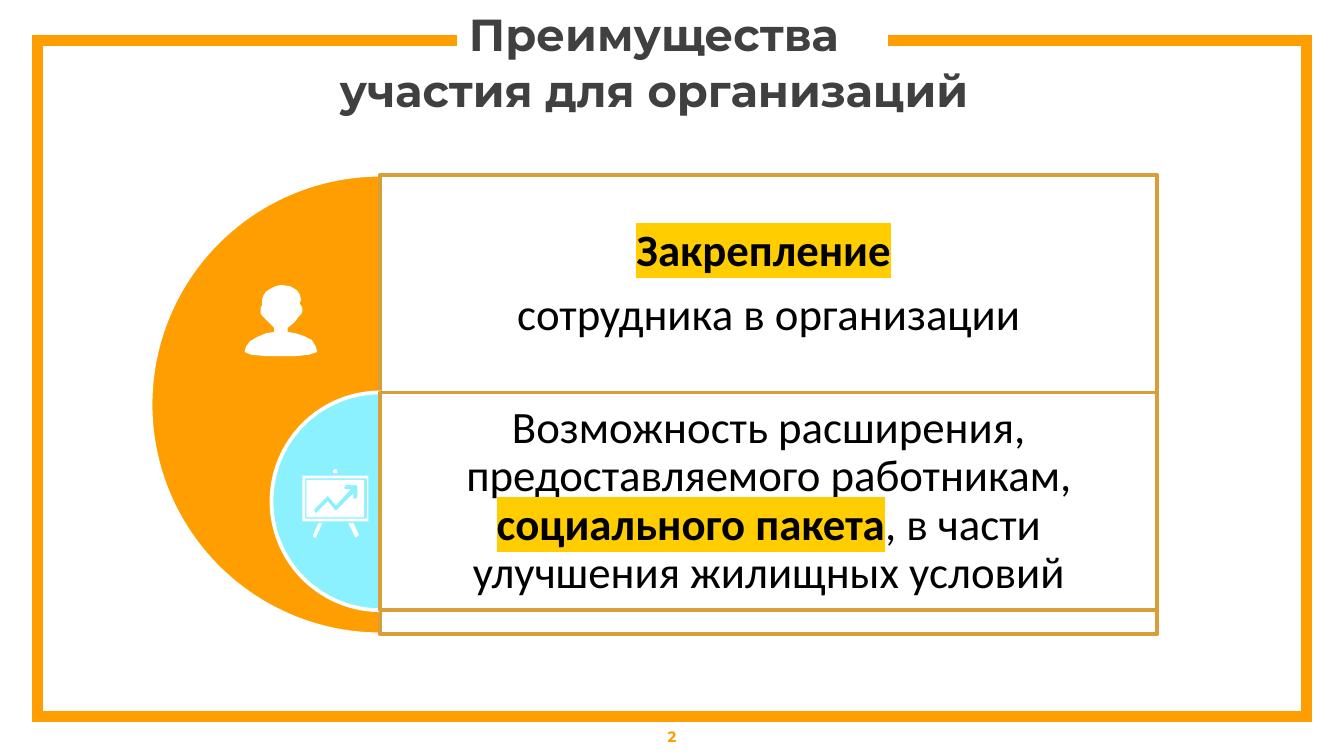
from pptx import Presentation, util as u
from pptx.dml.color import RGBColor
from pptx.enum import shapes, text
from pptx.oxml.ns import qn
from lxml import etree

W = 10
H = W * 9 / 16
ORANGE, YELLOW, CYAN, GOLD = "FF9E00", "FFCD00", "8BF1FF", "D89F39"
WHITE, BLACK, GREY = "FFFFFF", "000000", "404040"

# Content: a row is a list of paragraphs, a paragraph a list of (text, marked)
TITLE = ["Преимущества", "участия для организаций"]
PAGE = "2"
ROWS = [
    [[("Закрепление", True), (" ", False)],
     [("сотрудника в организации", False)]],
    [[("Возможность расширения, предоставляемого работникам, ", False),
      ("социального пакета", True), (", в части", False), ("\n", False),
      ("улучшения жилищных условий", False)]],
]

# Half discs share a vertical axis, where the panels start
AXIS, TOP, ROW_H, PANEL_W, BIG = 2.83, 1.3, 1.62, 5.78, 3.42
DISCS = [(BIG, ORANGE), (ROW_H, CYAN)]

# Outlines in hundredths of an inch
FRAME = [(340, 30), (28, 30), (28, 533), (972, 533), (972, 30), (661, 30)]
PERSON = [(209, 212), (205, 213), (201, 215), (198, 217), (196, 220), (195, 223),
          (195, 227), (194, 229), (194, 233), (195, 235), (197, 237), (199, 239),
          (204, 244), (204, 247), (198, 248), (191, 251), (186, 254), (183, 258),
          (182, 262), (187, 264), (198, 265), (209, 265), (220, 265), (230, 264),
          (236, 262), (235, 258), (232, 253), (226, 250), (220, 248), (214, 247),
          (214, 244), (219, 240), (222, 236), (224, 234), (225, 232), (225, 229),
          (223, 226), (224, 223), (223, 219), (221, 216), (216, 213)]
ARROW = [(265, 361), (266, 362), (266, 370), (265, 371), (263, 371), (263, 367),
         (251, 379), (250, 380), (249, 379), (244, 373), (236, 381), (235, 382),
         (234, 380), (234, 379), (243, 370), (244, 369), (250, 376), (261, 364),
         (257, 364), (256, 363), (257, 361)]


def box(l, t, r, b):
    return [(l, t), (r, t), (r, b), (l, b)]


BOARD = [
    [box(225, 354, 274, 388), box(227, 356, 273, 386)],
    [[(249, 349), (248, 350), (248, 352), (251, 352), (251, 350), (250, 349)]],
    [[(237, 389), (233, 398), (233, 399), (234, 400), (235, 400), (240, 389)]],
    [[(259, 389), (264, 399), (265, 400), (266, 399), (267, 398), (263, 389)]],
    [box(228, 357, 271, 385), ARROW],
]


def rgb(value):
    return RGBColor.from_string(value)


def style(sp, fill=None, line=None, width=2, alpha=None):
    sp.shadow.inherit = False
    if fill:
        sp.fill.solid()
        sp.fill.fore_color.rgb = rgb(fill)
        if alpha:
            color = sp.fill._xPr.find(qn("a:solidFill"))[0]
            etree.SubElement(color, qn("a:alpha"), val=str(alpha * 1000))
    else:
        sp.fill.background()
    if line:
        sp.line.color.rgb = rgb(line)
        sp.line.width = u.Pt(width)
    else:
        sp.line.fill.background()
    return sp


def outline(contours, close=True, **look):
    first, *rest = contours
    fb = s.shapes.build_freeform(*first[0], scale=9144)
    fb.add_line_segments(first[1:], close=close)
    for c in rest:
        fb.move_to(*c[0])
        fb.add_line_segments(c[1:], close=close)
    return style(fb.convert_to_shape(), **look)


def preset(kind, *at, **look):
    return style(s.shapes.add_shape(kind, *map(u.Inches, at)), **look)


def place(sp, at):
    sp.left, sp.top, sp.width, sp.height = map(u.Inches, at)
    return sp


def write(sp, paragraphs, font, size, color, bold=False, middle=False, spacing=None):
    tf = sp.text_frame
    tf.word_wrap = True
    tf.auto_size = text.MSO_AUTO_SIZE.NONE
    tf.vertical_anchor = text.MSO_ANCHOR.MIDDLE if middle else text.MSO_ANCHOR.TOP
    tf.margin_left = tf.margin_right = tf.margin_top = tf.margin_bottom = u.Inches(0.1)
    for i, runs in enumerate(paragraphs):
        p = tf.add_paragraph() if i else tf.paragraphs[0]
        p.alignment = text.PP_ALIGN.CENTER
        if spacing:
            p.line_spacing, p.space_after = spacing
        for words, marked in runs:
            if words == "\n":
                p.add_line_break()
                continue
            r = p.add_run()
            r.text = words
            f = r.font
            f.name, f.size, f.bold = font, u.Pt(size), bold or marked
            f.color.rgb = rgb(color)
            if marked:
                hl = etree.Element(qn("a:highlight"))
                etree.SubElement(hl, qn("a:srgbClr"), val=YELLOW)
                f._rPr.find(qn("a:solidFill")).addnext(hl)


def text_box(at, *args, **kw):
    write(s.shapes.add_textbox(*map(u.Inches, at)), *args, **kw)


prs = Presentation()
prs.slide_width, prs.slide_height = u.Inches(W), u.Inches(H)
s = prs.slides.add_slide(prs.slide_layouts[5])

# Frame with a gap for the title
frame = outline([FRAME], close=False, line=ORANGE, width=6)
etree.SubElement(frame.line._ln, qn("a:miter"), lim="800000")

# Title in two lines, and page number
heading = dict(font="Montserrat", size=24, color=GREY, bold=True)
write(place(s.shapes.title, (2.64, -0.05, 4.45, 0.65)), [[(TITLE[0], False)]], **heading)
text_box((2.31, 0.37, 5.11, 0.69), [[(TITLE[1], False)]], **heading)
text_box((0, 5.33, W, 0.3), [[(PAGE, False)]], "Montserrat", 8, ORANGE,
         bold=True, middle=True)

# Half discs with their panels
for i, (paragraphs, (size, color)) in enumerate(zip(ROWS, DISCS)):
    y = TOP + i * ROW_H
    pie = preset(shapes.MSO_SHAPE.PIE, AXIS - size / 2, y, size, size,
                 fill=color, line=WHITE)
    pie.adjustments[0], pie.adjustments[1] = 54, 162
    preset(shapes.MSO_SHAPE.RECTANGLE, AXIS, y, PANEL_W, size,
           fill=WHITE, line=GOLD, alpha=90)
    text_box((AXIS, y, PANEL_W, ROW_H), paragraphs, "Calibri", 24, BLACK,
             middle=True, spacing=(0.9, u.Pt(8.4)))

# Icons: person and presentation board
for contours in [[PERSON], *BOARD]:
    outline(contours, fill=WHITE)

prs.save("out.pptx")
